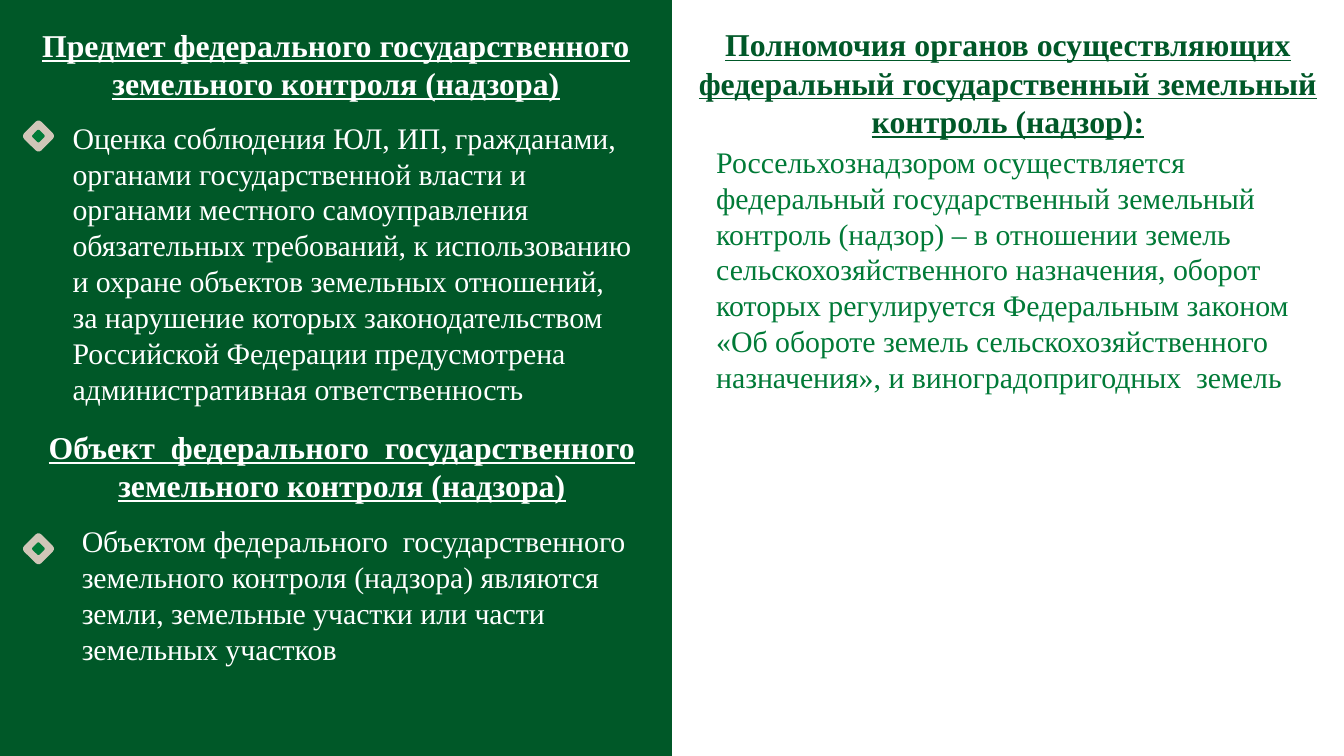
import pptx
import pptx.dml.color
import pptx.enum.shapes
import pptx.enum.text
import pptx.util

Pt = pptx.util.Pt
SHAPES = pptx.enum.shapes.MSO_SHAPE
ALIGN = pptx.enum.text.PP_ALIGN

WIDTH, HEIGHT = 720, 405
DARK, GREEN, BEIGE, WHITE = "005828", "007A37", "D0C6B8", "FFFFFF"


def color(value):
    return pptx.dml.color.RGBColor.from_string(value)


def write(shape, text, size=16, fill=WHITE, bold=False, underline=False,
          align=ALIGN.LEFT):
    frame = shape.text_frame
    frame.word_wrap = True
    frame.auto_size = pptx.enum.text.MSO_AUTO_SIZE.SHAPE_TO_FIT_TEXT
    frame.vertical_anchor = pptx.enum.text.MSO_ANCHOR.TOP
    paragraph = frame.paragraphs[0]
    paragraph.alignment = align
    run = paragraph.add_run()
    run.text = text
    font = run.font
    font.name = "Times New Roman"
    font.size = Pt(size)
    font.bold = bold
    font.underline = underline
    font.color.rgb = color(fill)


class SlideBuilder:
    heading_style = dict(size=17, bold=True, underline=True, align=ALIGN.CENTER)

    def __init__(self, slide):
        self.slide = slide

    def plain_shape(self, shapes, kind, left, top, width, height, fill):
        shape = shapes.add_shape(kind, Pt(left), Pt(top), Pt(width), Pt(height))
        shape.shadow.inherit = False
        shape.fill.solid()
        shape.fill.fore_color.rgb = color(fill)
        shape.line.fill.background()
        return shape

    def panel(self, width, height):
        shape = self.plain_shape(self.slide.shapes, SHAPES.RECTANGLE,
                                 0, 0, width, height, DARK)
        # The panel lies behind the title placeholder
        self.slide.shapes.title._element.addprevious(shape._element)

    def title(self, text, left, top, width, height):
        shape = self.slide.shapes.title
        shape.left, shape.top = Pt(left), Pt(top)
        shape.width, shape.height = Pt(width), Pt(height)
        write(shape, text, **self.heading_style)

    def body(self, text, left, top, width, height, **style):
        shape = self.slide.shapes.add_textbox(Pt(left), Pt(top), Pt(width), Pt(height))
        write(shape, text, **style)

    def heading(self, text, left, top, width, height, fill=WHITE):
        self.body(text, left, top, width, height, fill=fill, **self.heading_style)

    def marker(self, center_x, center_y):
        group = self.slide.shapes.add_group_shape()
        for side, fill in ((13, BEIGE), (5.3, GREEN)):
            shape = self.plain_shape(group.shapes, SHAPES.ROUNDED_RECTANGLE,
                                     center_x - side / 2, center_y - side / 2,
                                     side, side, fill)
            shape.rotation = 44.8


def main():
    presentation = pptx.Presentation()
    presentation.slide_width, presentation.slide_height = Pt(WIDTH), Pt(HEIGHT)
    slide = presentation.slides.add_slide(presentation.slide_layouts[5])
    builder = SlideBuilder(slide)
    half = WIDTH / 2
    builder.panel(half, HEIGHT)

    # Left half: subject of control
    builder.title("Предмет федерального государственного земельного контроля (надзора)",
                  0, 10, half, 48)
    builder.marker(20.6, 72.9)
    builder.body("Оценка соблюдения ЮЛ, ИП, гражданами, органами государственной власти "
                 "и органами местного самоуправления обязательных требований, "
                 "к использованию и охране объектов земельных отношений, за нарушение "
                 "которых законодательством Российской Федерации предусмотрена "
                 "административная ответственность", 31.8, 60.5, 316, 177)

    # Left half: object of control
    builder.heading("Объект  федерального  государственного земельного контроля (надзора)",
                    12.2, 225.4, 342, 48)
    builder.marker(20.6, 294)
    builder.body("Объектом федерального  государственного земельного контроля (надзора) "
                 "являются земли, земельные участки или части земельных участков",
                 36.7, 276.5, 323, 85)

    # Right half: powers of the authorities
    builder.heading("Полномочия органов осуществляющих федеральный государственный "
                    "земельный контроль (надзор):", half, 10, half, 69, fill=DARK)
    builder.body("Россельхознадзором осуществляется федеральный государственный земельный "
                 "контроль (надзор) – в отношении земель сельскохозяйственного назначения, "
                 "оборот которых регулируется Федеральным законом «Об обороте земель "
                 "сельскохозяйственного назначения», и виноградопригодных  земель",
                 376.6, 73.4, 323, 317.5, fill=GREEN)

    presentation.save("out.pptx")


if __name__ == "__main__":
    main()
